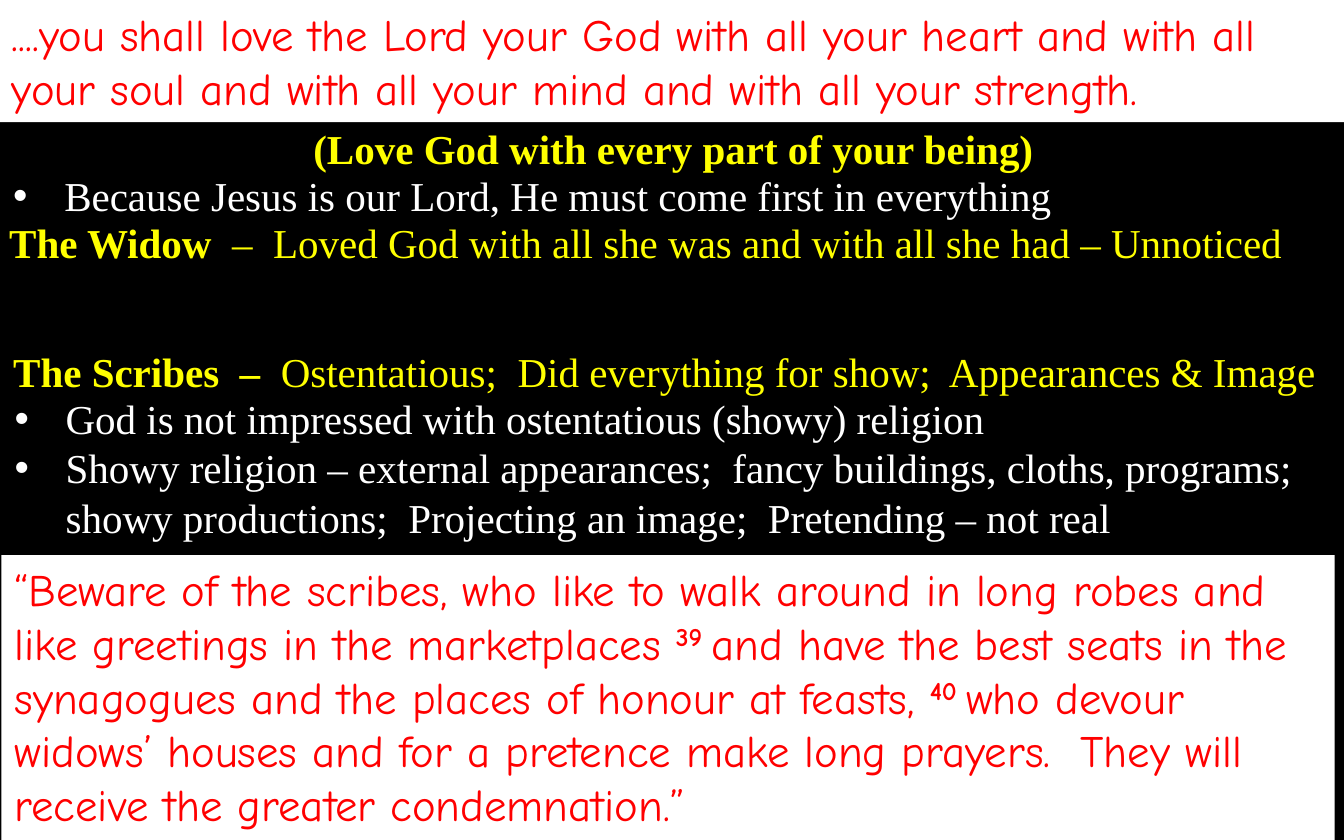
from pptx import Presentation
from pptx.dml.color import RGBColor
from pptx.enum.shapes import MSO_SHAPE
from pptx.enum.text import MSO_ANCHOR, PP_ALIGN
from pptx.oxml.ns import qn
from pptx.util import Inches, Pt
from lxml import etree

BLACK, WHITE, RED, YELLOW = "000000", "FFFFFF", "FF0000", "FFFF00"
VERSE_FONT, NOTE_FONT = "Comic Neue", "Times New Roman"
BULLET_INDENT = 0.38


def colour(hex_string):
    return RGBColor.from_string(hex_string)


def style(font, name, size, hex_string):
    font.name = name
    font.size = Pt(size)
    font.color.rgb = colour(hex_string)


def add_spans(para, parts):
    """Add (text, bold) pairs as runs and return the runs."""
    spans = []
    for text, bold in parts:
        span = para.add_run()
        span.text = text
        span.font.bold = bold
        spans.append(span)
    return spans


def set_bullet(para):
    properties = para._p.get_or_add_pPr()
    properties.set("marL", str(Inches(BULLET_INDENT)))
    properties.set("indent", str(-Inches(BULLET_INDENT)))
    etree.SubElement(properties, qn("a:buFont")).set("typeface", "Arial")
    etree.SubElement(properties, qn("a:buChar")).set("char", "•")


def add_verse(page, left, top, width, height, parts):
    """White panel of scripture; bold parts are raised verse numbers."""
    panel = page.shapes.add_shape(MSO_SHAPE.RECTANGLE, Inches(left), Inches(top),
                                  Inches(width), Inches(height))
    panel.shadow.inherit = False
    panel.fill.solid()
    panel.fill.fore_color.rgb = colour(WHITE)
    panel.line.fill.background()
    frame = panel.text_frame
    frame.word_wrap = True
    frame.vertical_anchor = MSO_ANCHOR.TOP
    para = frame.paragraphs[0]
    para.alignment = PP_ALIGN.LEFT
    for span in add_spans(para, parts):
        style(span.font, VERSE_FONT, 24, RED)
        if span.font.bold:
            span._r.get_or_add_rPr().set("baseline", "30000")


def add_note_box(page, left, top, width, height):
    box = page.shapes.add_textbox(Inches(left), Inches(top), Inches(width), Inches(height))
    box.text_frame.word_wrap = True
    return box.text_frame


def add_heading(page, left, top, width, height, parts, align=PP_ALIGN.LEFT):
    """One yellow line."""
    para = add_note_box(page, left, top, width, height).paragraphs[0]
    para.alignment = align
    for span in add_spans(para, parts):
        style(span.font, NOTE_FONT, 22, YELLOW)


def add_bullets(page, left, top, width, height, lines):
    """White bulleted list."""
    frame = add_note_box(page, left, top, width, height)
    for index, line in enumerate(lines):
        para = frame.add_paragraph() if index else frame.paragraphs[0]
        set_bullet(para)
        para.text = line
        style(para.font, NOTE_FONT, 22, WHITE)


def main():
    deck = Presentation()
    deck.slide_width, deck.slide_height = Inches(10), Inches(6.25)
    page = deck.slides.add_slide(deck.slide_layouts[6])
    page.background.fill.solid()
    page.background.fill.fore_color.rgb = colour(BLACK)

    # The commandment
    add_verse(page, -0.01, 0, 10.01, 0.91, [
        ("....you shall love the Lord your God with all your heart and with all "
         "your soul and with all your mind and with all your strength.", False)])
    add_heading(page, 0.02, 0.87, 9.98, 0.47,
                [("(Love God with every part of your being)", True)], PP_ALIGN.CENTER)
    add_bullets(page, 0, 1.22, 10.01, 0.47,
                ["Because Jesus is our Lord, He must come first in everything"])

    # The widow and the scribes
    add_heading(page, -0.03, 1.57, 9.82, 0.47, [
        ("The Widow", True),
        ("  –  Loved God with all she was and with all she had – Unnoticed", False)])
    add_heading(page, 0, 2.53, 9.99, 0.47, [
        ("The Scribes  –  ", True),
        ("Ostentatious;  Did everything for show;  Appearances & Image", False)])
    add_bullets(page, 0.01, 2.88, 9.92, 1.21, [
        "God is not impressed with ostentatious (showy) religion",
        "Showy religion – external appearances;  fancy buildings, cloths, programs;  "
        "showy productions;  Projecting an image;  Pretending – not real"])

    # The warning
    add_verse(page, 0.01, 4.13, 9.92, 2.12, [
        ("“Beware of the scribes, who like to walk around in long robes and like "
         "greetings in the marketplaces ", False),
        ("39\u00a0", True),
        ("and have the best seats in the synagogues and the places of honour at feasts, ", False),
        ("40\u00a0", True),
        ("who devour widows’ houses and for a pretence make long prayers.  "
         "They will receive the greater condemnation.”", False)])

    deck.save("out.pptx")


if __name__ == "__main__":
    main()
